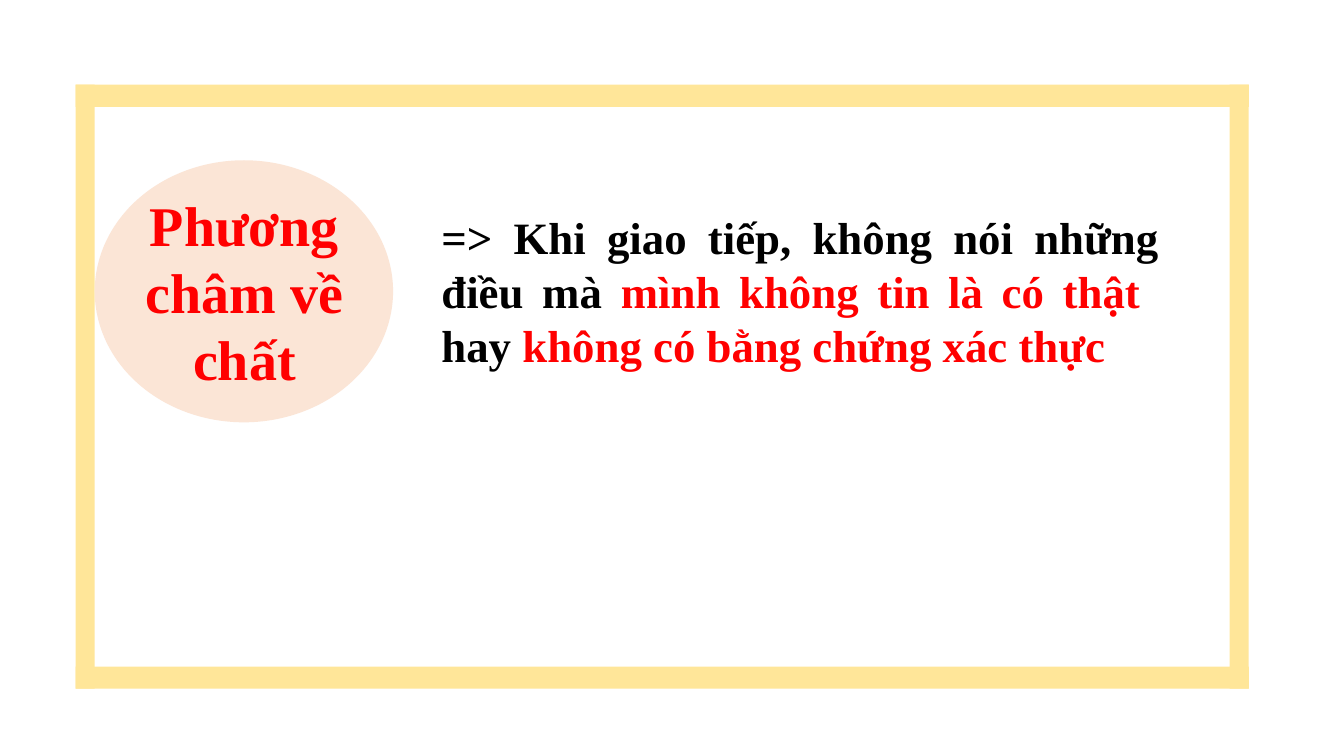
from dataclasses import dataclass

from pptx import Presentation
from pptx.dml.color import RGBColor
from pptx.enum import shapes, text
from pptx.util import Pt


@dataclass(frozen=True)
class Theme:
    font: str = "Times New Roman"
    frame: str = "FFE699"
    bubble: str = "FBE5D6"
    ink: str = "000000"
    accent: str = "FF0000"
    title_size: float = 40
    body_size: float = 32


@dataclass(frozen=True)
class Box:
    left: float
    top: float
    width: float
    height: float

    def lengths(self) -> tuple[Pt, Pt, Pt, Pt]:
        return Pt(self.left), Pt(self.top), Pt(self.width), Pt(self.height)


@dataclass(frozen=True)
class Phrase:
    words: str
    color: str


THEME = Theme()
FRAME = Box(54, 60.5, 838, 431.5)
BAR_WIDTH, BAR_HEIGHT = 13.7, 15.8
BUBBLE = Box(67.7, 114.5, 213.1, 187.2)
TITLE_BOX = Box(72.7, 132.5, 203.8, 152.6)
RULE_BOX = Box(308.2, 146.2, 527, 123.8)

TITLE = [Phrase("Phương châm về chất", THEME.accent)]
RULE = [
    Phrase("=> Khi giao tiếp, không nói những điều mà ", THEME.ink),
    Phrase("mình không tin là có thật  ", THEME.accent),
    Phrase("hay ", THEME.ink),
    Phrase("không có bằng chứng xác thực", THEME.accent),
]


def add_filled(s, kind: shapes.MSO_SHAPE, box: Box, color: str) -> None:
    sp = s.shapes.add_shape(kind, *box.lengths())
    sp.shadow.inherit = False
    sp.fill.solid()
    sp.fill.fore_color.rgb = RGBColor.from_string(color)
    sp.line.fill.background()


def add_frame(s, frame: Box) -> None:
    """Draw four bars along the inner edges of the frame box."""
    right = frame.left + frame.width - BAR_WIDTH
    bottom = frame.top + frame.height - BAR_HEIGHT
    bars = [Box(frame.left, y, frame.width, BAR_HEIGHT) for y in (frame.top, bottom)]
    bars += [Box(x, frame.top, BAR_WIDTH, frame.height) for x in (frame.left, right)]
    for bar in bars:
        add_filled(s, shapes.MSO_SHAPE.RECTANGLE, bar, THEME.frame)


def add_text(s, box: Box, phrases: list[Phrase], size: float,
             align: text.PP_ALIGN) -> None:
    tf = s.shapes.add_textbox(*box.lengths()).text_frame
    tf.word_wrap = True
    p = tf.paragraphs[0]
    p.alignment = align
    for phrase in phrases:
        r = p.add_run()
        r.text = phrase.words
        r.font.name = THEME.font
        r.font.size = Pt(size)
        r.font.bold = True
        r.font.color.rgb = RGBColor.from_string(phrase.color)


def main() -> None:
    prs = Presentation()
    prs.slide_width, prs.slide_height = Pt(960), Pt(540)
    s = prs.slides.add_slide(prs.slide_layouts[6])
    add_frame(s, FRAME)
    add_text(s, RULE_BOX, RULE, THEME.body_size, text.PP_ALIGN.JUSTIFY)
    add_filled(s, shapes.MSO_SHAPE.OVAL, BUBBLE, THEME.bubble)
    add_text(s, TITLE_BOX, TITLE, THEME.title_size, text.PP_ALIGN.CENTER)
    prs.save("out.pptx")


if __name__ == "__main__":
    main()
